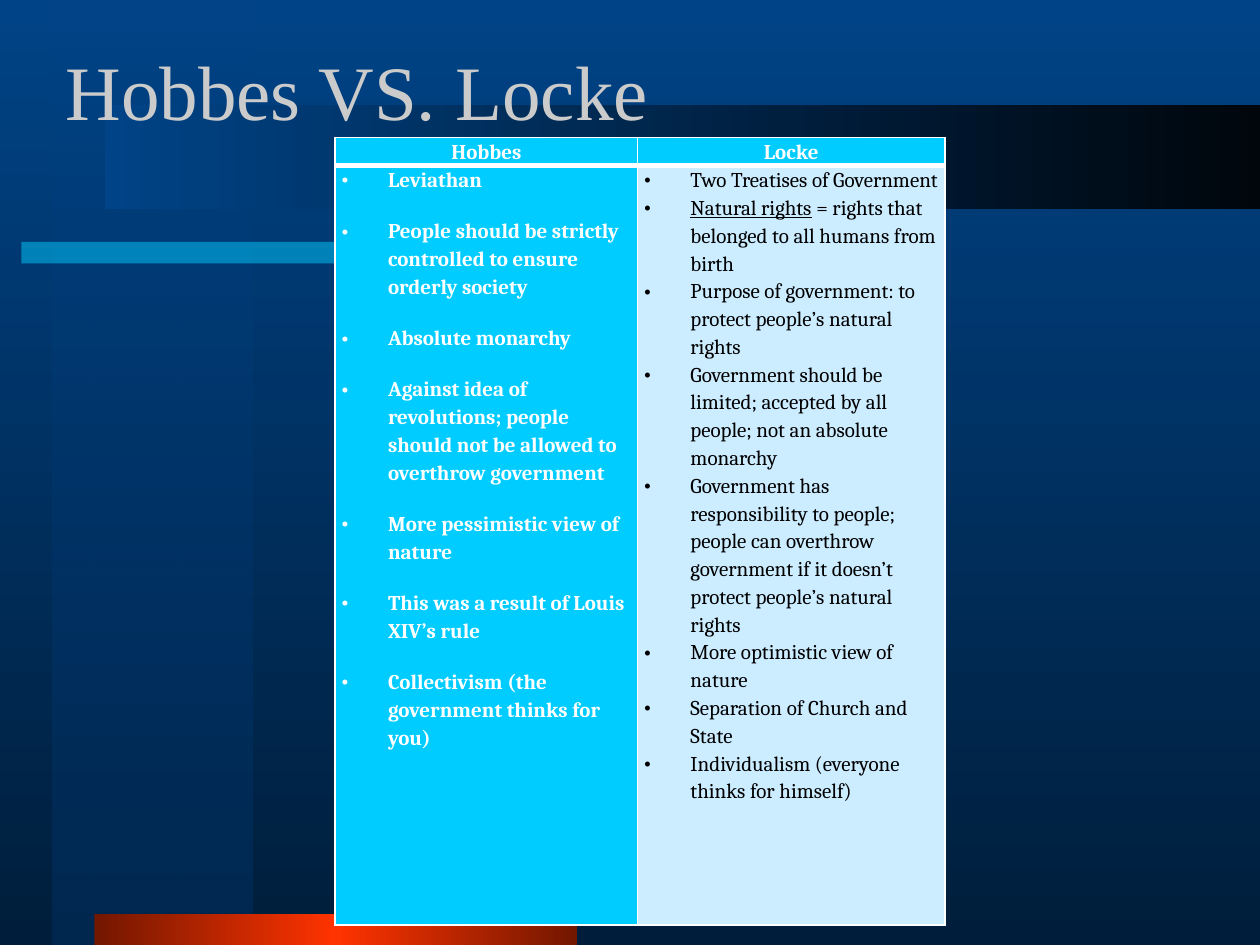
from lxml.etree import SubElement as Sub
from pptx import Presentation as Deck
from pptx.dml.color import RGBColor as Color
from pptx.enum.shapes import MSO_SHAPE as Kind
from pptx.enum.text import MSO_ANCHOR as Anchor, PP_ALIGN as Align
from pptx.oxml.ns import qn
from pptx.util import Inches, Pt

WHITE, CYAN, PALE, BLACK = "FFFFFF", "00CCFF", "CCECFF", "000000"

HOBBES = [
    "Leviathan",
    "People should be strictly controlled to ensure orderly society",
    "Absolute monarchy",
    "Against idea of revolutions; people should not be allowed to overthrow government",
    "More pessimistic view of nature",
    "This was a result of Louis XIV’s rule",
    "Collectivism (the government thinks for you)",
]
LOCKE = [
    "Two Treatises of Government",
    ("Natural rights", " = rights that belonged to all humans from birth"),
    "Purpose of government: to protect people’s natural rights",
    "Government should be limited; accepted by all people; not an absolute monarchy",
    "Government has responsibility to people; people can overthrow government "
    "if it doesn’t protect people’s natural rights",
    "More optimistic view of nature",
    "Separation of Church and State",
    "Individualism (everyone thinks for himself)",
]


def tint(code):
    return Color.from_string(code)


def apply(item, **vals):
    for key, val in vals.items():
        setattr(item, key, val)


def blend(fill, root, stops, angle):
    fill.gradient()
    fill.gradient_angle = angle
    group = next(root.iter(qn("a:gsLst")))
    for old in list(group):
        group.remove(old)
    for pos, code, alpha in stops:
        stop = Sub(group, qn("a:gs"), pos=str(pos * 1000))
        hue = Sub(stop, qn("a:srgbClr"), val=code)
        if alpha < 100:
            Sub(hue, qn("a:alpha"), val=str(alpha * 1000))


class Page:
    body = {"name": "Cambria", "size": Pt(12)}
    head = {"name": "Times New Roman", "size": Pt(44), "bold": False}
    inset = {"margin_left": Inches(0.05), "margin_right": Inches(0.05),
             "margin_top": 0, "margin_bottom": 0}

    def __init__(self, deck):
        self.slide = deck.slides.add_slide(deck.slide_layouts[5])

    def ground(self, stops, angle):
        back = self.slide.background
        blend(back.fill, self.slide.element, stops, angle)

    def bar(self, box, stops, angle=0):
        shape = self.slide.shapes.add_shape(Kind.RECTANGLE, *map(Inches, box))
        shape.shadow.inherit = False
        shape.line.fill.background()
        if len(stops) > 1:
            blend(shape.fill, shape.element, stops, angle)
            return
        pos, code, alpha = stops[0]
        shape.fill.solid()
        shape.fill.fore_color.rgb = tint(code)
        hue = next(shape.element.iter(qn("a:srgbClr")))
        Sub(hue, qn("a:alpha"), val=str(alpha * 1000))

    def title(self, text, box, code):
        shape = self.slide.shapes.title
        apply(shape, **dict(zip(("left", "top", "width", "height"), map(Inches, box))))
        frame = shape.text_frame
        apply(frame, text=text, vertical_anchor=Anchor.MIDDLE, word_wrap=True)
        para = frame.paragraphs[0]
        para.alignment = Align.LEFT
        apply(para.runs[0].font, **self.head)
        para.runs[0].font.color.rgb = tint(code)
        self.slide.shapes.element.append(shape.element)

    def table(self, spot, cols, rows):
        size = sum(cols), sum(rows)
        frame = self.slide.shapes.add_table(
            len(rows), len(cols), *map(Inches, (*spot, *size)))
        grid = frame.table
        apply(grid, horz_banding=False)
        for col, width in zip(grid.columns, cols):
            col.width = Inches(width)
        for row, height in zip(grid.rows, rows):
            row.height = Inches(height)
        return grid

    def cell(self, cell, items, fill, code, bold, gap=0, list_=True, base=1):
        apply(cell, **self.inset)
        cell.fill.solid()
        cell.fill.fore_color.rgb = tint(fill)
        self.edge(cell, base)
        frame = cell.text_frame
        for num, item in enumerate(items):
            para = frame.add_paragraph() if num else frame.paragraphs[0]
            apply(para, line_spacing=1.15, space_before=Pt(gap if num else 0),
                  alignment=Align.LEFT if list_ else Align.CENTER)
            if list_:
                self.dot(para)
            parts = (item,) if isinstance(item, str) else item
            for spot, text in enumerate(parts):
                run = para.add_run()
                run.text = text
                line = len(parts) > 1 and spot == 0
                apply(run.font, bold=bold, underline=line, **self.body)
                run.font.color.rgb = tint(code)

    def dot(self, para):
        props = para._p.get_or_add_pPr()
        props.set("marL", str(Inches(0.37)))
        props.set("indent", str(-Inches(0.37)))
        Sub(props, qn("a:buFont"), typeface=self.head["name"])
        Sub(props, qn("a:buChar"), char="•")

    def edge(self, cell, base):
        props = cell._tc.get_or_add_tcPr()
        for num, side in enumerate("LRTB"):
            wide = Pt(base if side == "B" else 1)
            line = Sub(props, qn(f"a:ln{side}"), w=str(wide))
            Sub(Sub(line, qn("a:solidFill")), qn("a:srgbClr"), val=WHITE)
            props.insert(num, line)


def main():
    deck = Deck()
    apply(deck, slide_width=Inches(10), slide_height=Inches(7.5))
    page = Page(deck)
    page.ground([(0, "004386", 100), (100, "001E3B", 100)], 270)
    page.bar((0.42, 0, 1.58, 7.5), [(0, "004386", 50), (100, "002850", 100)], 270)
    page.bar((0.17, 1.92, 5.17, 0.17), [(0, CYAN, 50)])
    page.bar((0.75, 7.25, 3.83, 0.25),
             [(0, "721700", 100), (50, "FF3300", 100), (100, "721700", 100)])
    page.bar((0.83, 0.83, 9.17, 0.83), [(0, "004386", 100), (100, "00060C", 100)])
    page.title("Hobbes VS. Locke", (0.42, 0.25, 8.5, 0.92), "CBCBCB")

    grid = page.table((2.66, 1.09), (2.4, 2.44), (0.22, 6.03))
    for col, name in enumerate(("Hobbes", "Locke")):
        page.cell(grid.cell(0, col), [name], CYAN, WHITE, True, list_=False, base=3)
    page.cell(grid.cell(1, 0), HOBBES, CYAN, WHITE, True, gap=13.4)
    page.cell(grid.cell(1, 1), LOCKE, PALE, BLACK, False)
    deck.save("out.pptx")


if __name__ == "__main__":
    main()
